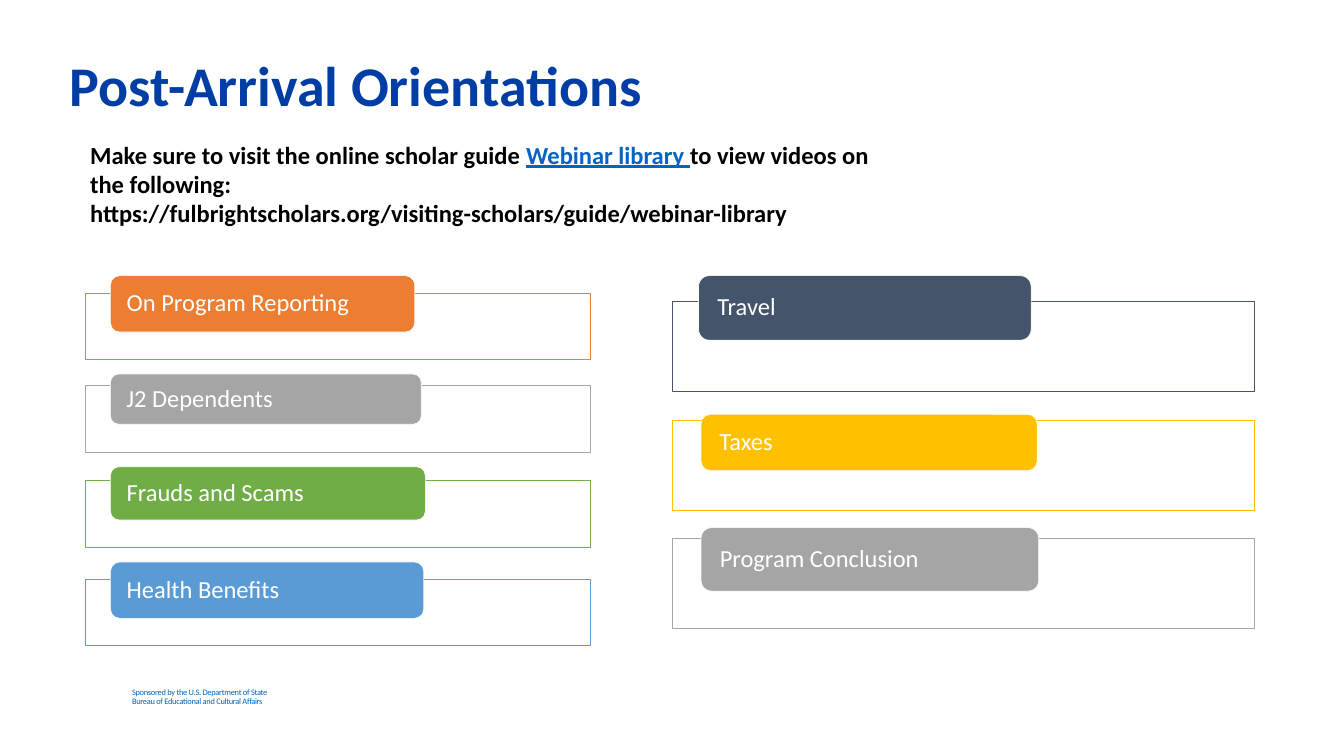
from lxml.etree import SubElement
from pptx import Presentation
from pptx.dml.color import RGBColor
from pptx.enum.shapes import MSO_SHAPE
from pptx.enum.text import MSO_ANCHOR
from pptx.oxml.ns import qn
from pptx.util import Pt


def color(value):
    return RGBColor.from_string(value)


def add_text(box, paragraphs, size, value, bold=False, spacing=1.0):
    tf = box.text_frame
    tf.word_wrap = True
    for i, runs in enumerate(paragraphs):
        p = tf.paragraphs[0] if i == 0 else tf.add_paragraph()
        p.line_spacing = spacing
        p.font.name = "Calibri"
        p.font.size = Pt(size)
        p.font.bold = bold
        for text in runs:
            r = p.add_run()
            r.text = text
            r.font.color.rgb = color(value)
    return tf


prs = Presentation()
prs.slide_width, prs.slide_height = Pt(1920), Pt(1080)
s = prs.slides.add_slide(prs.slide_layouts[6])

box = s.shapes.add_textbox(Pt(181.5), Pt(975.5), Pt(259), Pt(43))
sponsor = [["Sponsored by the U.S. Department of State"],
           ["Bureau of Educational and Cultural Affairs"]]
tf = add_text(box, sponsor, 12, "0165BE", spacing=0.9)
tf.word_wrap = False
tf.margin_left = tf.margin_right = tf.margin_top = tf.margin_bottom = Pt(7.2)
for p in tf.paragraphs:
    p.runs[0].font._element.set("spc", "-40")

box = s.shapes.add_textbox(Pt(121.7), Pt(195.8), Pt(1139.8), Pt(138.2))
intro = [["Make sure to visit the online scholar guide ", "Webinar library ",
          "to view videos on the following:"],
         ["https://fulbrightscholars.org/visiting-scholars/guide/webinar-library"]]
tf = add_text(box, intro, 35, "000000", bold=True)
r = tf.paragraphs[0].runs[1]
r.font.color.rgb = color("0563C1")
r.font.underline = True

box = s.shapes.add_textbox(Pt(92.9), Pt(79.2), Pt(951.8), Pt(226.8))
add_text(box, [["Post-Arrival Orientations"]], 80, "003DA5", bold=True, spacing=0.9)

columns = [
    (121.7, 721.4, 95, 19.4, [
        ("On Program Reporting", "ED7D31", 419, 157.7, 393.8, 434.9, 80.6),
        ("J2 Dependents", "A5A5A5", 550.8, 157.7, 534.2, 444.2, 72),
        ("Frauds and Scams", "70AD47", 686.9, 157.7, 666.7, 450, 76.3),
        ("Health Benefits", "5B9BD5", 827.3, 157.7, 802.8, 447.8, 80.6),
    ]),
    (959.8, 831.6, 128.9, 22.3, [
        ("Travel", "44546A", 429.8, 997.9, 393.8, 475.2, 92.2),
        ("Taxes", "FFC000", 600.5, 1001.5, 591.8, 480.2, 80.6),
        ("Program Conclusion", "A5A5A5", 769, 1001.5, 753.8, 482.4, 90.7),
    ]),
]
for left, width, height, inset, topics in columns:
    for label, accent, top, x, y, w, h in topics:
        frame = s.shapes.add_shape(MSO_SHAPE.RECTANGLE, Pt(left), Pt(top), Pt(width), Pt(height))
        tab = s.shapes.add_shape(MSO_SHAPE.ROUNDED_RECTANGLE, Pt(x), Pt(y), Pt(w), Pt(h))
        for sp, fill, line in ((frame, "FFFFFF", accent), (tab, accent, "FFFFFF")):
            sp.shadow.inherit = False
            sp.fill.solid()
            sp.fill.fore_color.rgb = color(fill)
            sp.line.color.rgb = color(line)
            sp.line.width = Pt(1)
        fill_color = frame._element.spPr.find(qn("a:solidFill")).find(qn("a:srgbClr"))
        SubElement(fill_color, qn("a:alpha"), val="90000")
        tf = add_text(tab, [[label]], 35, "FFFFFF", spacing=0.9)
        tf.vertical_anchor = MSO_ANCHOR.MIDDLE
        tf.margin_left = tf.margin_right = Pt(inset)
        tf.margin_top = tf.margin_bottom = 0
        tf.paragraphs[0].alignment = 1

prs.save("out.pptx")
